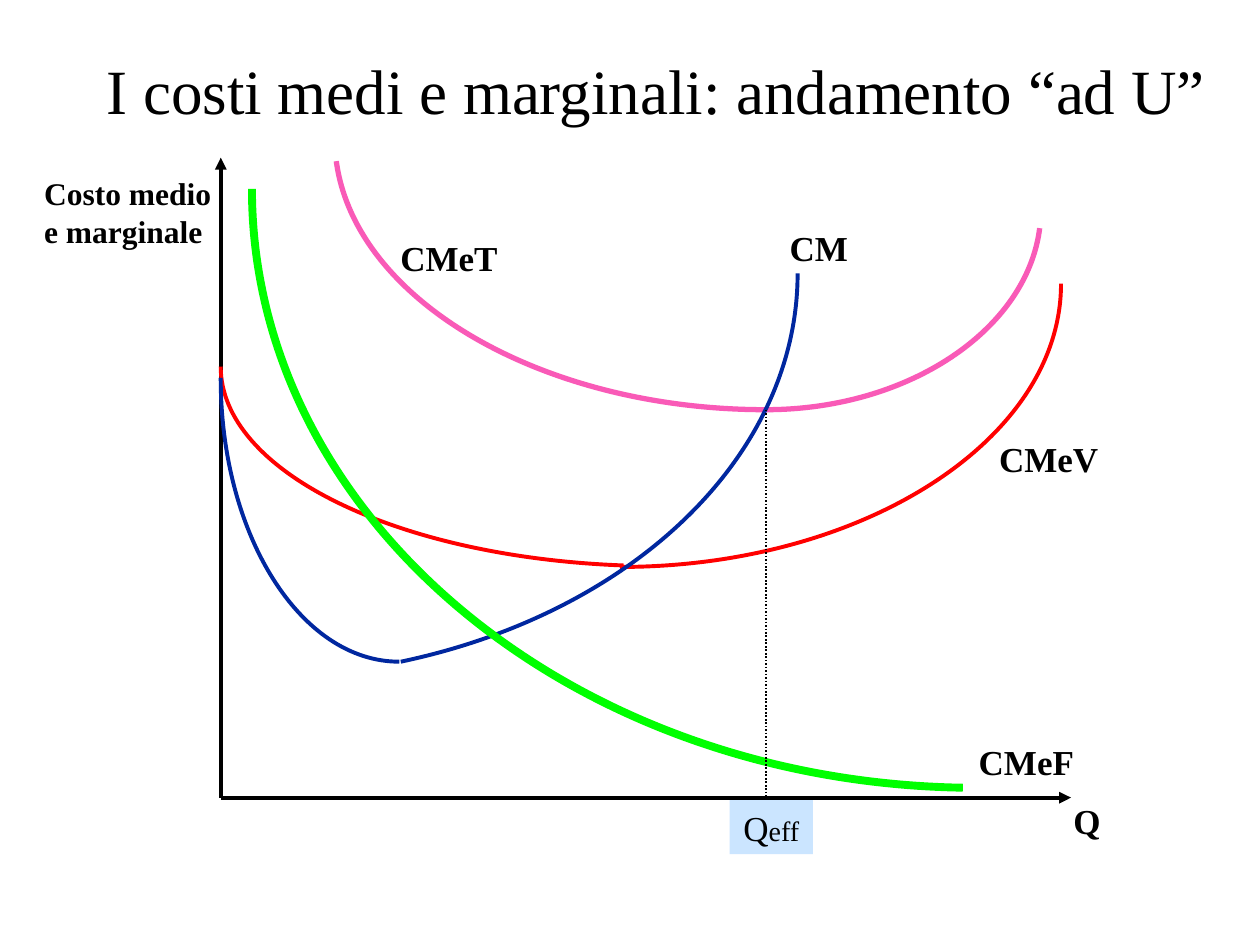
from pptx import Presentation
from pptx.dml.color import RGBColor
from pptx.enum.dml import MSO_LINE
from pptx.enum.shapes import MSO_CONNECTOR, MSO_SHAPE
from pptx.oxml.ns import qn
from pptx.util import Cm, Pt
from lxml.etree import SubElement

BLACK = RGBColor(0x00, 0x00, 0x00)
PINK = RGBColor(0xF9, 0x5A, 0xB7)
RED = RGBColor(0xFF, 0x00, 0x00)
BLUE = RGBColor(0x00, 0x27, 0x9F)
GREEN = RGBColor(0x00, 0xFF, 0x00)
LIGHT_BLUE = RGBColor(0x99, 0xCC, 0xFF)

# Chart geometry in centimetres
AXIS_X, AXIS_Y = 4.45, 16.08
AXIS_TOP, AXIS_RIGHT = 3.18, 21.59
EFFICIENT_X, EFFICIENT_Y = 15.44, 8.26
LABEL_HEIGHT = 1.09


def write_text(paragraph, text, font="Times New Roman", size=20, bold=False, color=BLACK):
    run = paragraph.add_run()
    run.text = text
    run.font.name = font
    run.font.size = Pt(size)
    run.font.bold = bold
    run.font.color.rgb = color


class CostSlide:
    def __init__(self, presentation):
        self.slide = presentation.slides.add_slide(presentation.slide_layouts[6])
        self.shapes = self.slide.shapes

    def text(self, left, top, width, height, *lines, wrap=False, **style):
        box = self.shapes.add_textbox(Cm(left), Cm(top), Cm(width), Cm(height))
        frame = box.text_frame
        frame.word_wrap = wrap
        for index, line in enumerate(lines):
            paragraph = frame.add_paragraph() if index else frame.paragraphs[0]
            write_text(paragraph, line, **style)

    def line(self, start, end, width, arrow=False, dash=None):
        connector = self.shapes.add_connector(
            MSO_CONNECTOR.STRAIGHT, *(Cm(value) for value in (*start, *end)))
        connector.line.color.rgb = BLACK
        connector.line.width = Pt(width)
        if dash:
            connector.line.dash_style = dash
        if arrow:
            SubElement(connector.line._get_or_add_ln(), qn("a:tailEnd"), type="triangle")
        SubElement(connector._element.spPr, qn("a:effectLst"))

    def curve(self, color, width, start, *controls):
        """Draw one cubic Bézier arc from its start, two handles and end."""
        builder = self.shapes.build_freeform(Cm(start[0]), Cm(start[1]))
        builder.add_line_segments([(Cm(x), Cm(y)) for x, y in controls], close=False)
        shape = builder.convert_to_shape()
        shape.shadow.inherit = False
        shape.fill.background()
        shape.line.color.rgb = color
        shape.line.width = Pt(width)
        # Turn the three straight segments into one cubic segment
        outline = next(shape._element.iter(qn("a:path")))
        segments = outline.findall(qn("a:lnTo"))
        cubic = SubElement(outline, qn("a:cubicBezTo"))
        for segment in segments:
            cubic.append(segment[0])
            outline.remove(segment)

    def box(self, left, top, width, height, color, opacity):
        shape = self.shapes.add_shape(
            MSO_SHAPE.RECTANGLE, Cm(left), Cm(top), Cm(width), Cm(height))
        shape.shadow.inherit = False
        shape.fill.solid()
        shape.fill.fore_color.rgb = color
        fill_color = next(shape._element.spPr.iter(qn("a:srgbClr")))
        SubElement(fill_color, qn("a:alpha"), val=str(opacity * 1000))
        shape.line.fill.background()
        shape.text_frame.word_wrap = False
        return shape.text_frame.paragraphs[0]


def main():
    presentation = Presentation()
    presentation.slide_width = Cm(25.4)
    presentation.slide_height = Cm(19.05)
    page = CostSlide(presentation)

    # Axes
    origin = (AXIS_X, AXIS_Y)
    for end in ((AXIS_X, AXIS_TOP), (AXIS_RIGHT, AXIS_Y)):
        page.line(origin, end, 2.25, arrow=True)

    # Title and axis names
    page.text(1.9, 0.91, 22.71, 1.78, "I costi medi e marginali: andamento “ad U”", size=36)
    page.text(0.64, 3.38, 3.89, 1.78, "Costo medio", "e marginale", size=18, bold=True)
    page.text(21.39, 16, 1.07, LABEL_HEIGHT, "Q", bold=True)

    # Cost curves, each arc running up from its lowest point
    minimum = (EFFICIENT_X, EFFICIENT_Y)
    arcs = (
        (PINK, 3, minimum, (18.31, EFFICIENT_Y), (20.7, 6.65), (20.96, 4.6)),
        (PINK, 3, minimum, (10.95, EFFICIENT_Y), (7.16, 6.07), (6.78, 3.25)),
        (RED, 2.25, (12.57, 11.4), (7.98, 11.23), (AXIS_X, 9.5), (AXIS_X, 7.39)),
        (RED, 2.25, (12.5, 11.43), (17.4, 11.43), (21.39, 8.86), (21.39, 5.72)),
        (BLUE, 2.25, (8.08, 13.34), (12.83, 12.34), (16.08, 9.14), (16.08, 5.51)),
        (GREEN, 4.5, (19.41, 15.88), (11.46, 15.75), (5.08, 10.39), (5.08, 3.81)),
        (BLUE, 2.25, (8.05, 13.34), (6.05, 13.34), (AXIS_X, 10.77), (AXIS_X, 7.62)),
    )
    for arc in arcs:
        page.curve(*arc)

    # Curve names
    for name, left, top, width in (
        ("CMeF", 19.48, 14.81, 3.18),
        ("CMeV", 19.89, 8.69, 3.18),
        ("CMeT", 7.82, 4.65, 2.97),
        ("CM", 15.67, 4.45, 2.34),
    ):
        page.text(left, top, width, LABEL_HEIGHT, name, wrap=True, bold=True)

    # Efficient quantity
    page.line(minimum, (EFFICIENT_X, AXIS_Y), 1, dash=MSO_LINE.ROUND_DOT)
    paragraph = page.box(14.71, 16.13, 1.68, LABEL_HEIGHT, LIGHT_BLUE, 51)
    write_text(paragraph, "Q")
    write_text(paragraph, "eff", size=16)

    presentation.save("out.pptx")


if __name__ == "__main__":
    main()
